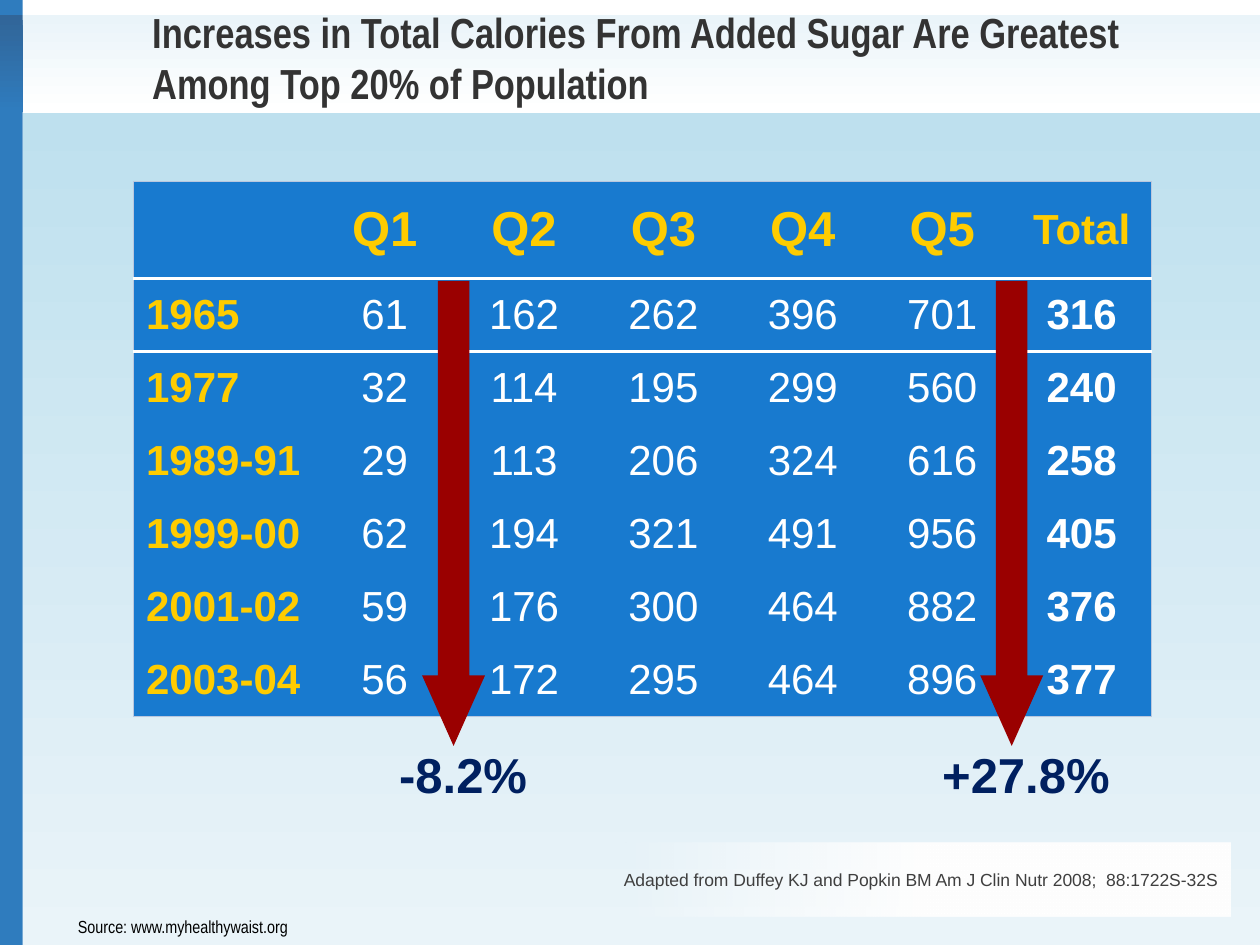
from lxml import etree
from pptx import Presentation
from pptx.dml.color import RGBColor
from pptx.enum.shapes import MSO_SHAPE
from pptx.enum.text import MSO_ANCHOR, PP_ALIGN
from pptx.oxml.ns import qn
from pptx.util import Inches, Pt

RECT, DOWN_ARROW = MSO_SHAPE.RECTANGLE, MSO_SHAPE.DOWN_ARROW
TOP, MIDDLE = MSO_ANCHOR.TOP, MSO_ANCHOR.MIDDLE
LEFT, CENTER, RIGHT = PP_ALIGN.LEFT, PP_ALIGN.CENTER, PP_ALIGN.RIGHT

COLORS = {
    "stripe": "2F7CBE", "stripe_dark": "316598", "pale": "EAF4F9",
    "sky": "BEE0EE", "white": "FFFFFF", "black": "000000",
    "title": "333333", "citation": "3F3F3F", "table": "187ACF",
    "edge": "B9C7DE", "gold": "FFCC00", "arrow": "9A0000", "navy": "002060",
}

ROWS = [
    ["", "Q1", "Q2", "Q3", "Q4", "Q5", "Total"],
    ["1965", "61", "162", "262", "396", "701", "316"],
    ["1977", "32", "114", "195", "299", "560", "240"],
    ["1989-91", "29", "113", "206", "324", "616", "258"],
    ["1999-00", "62", "194", "321", "491", "956", "405"],
    ["2001-02", "59", "176", "300", "464", "882", "376"],
    ["2003-04", "56", "172", "295", "464", "896", "377"],
]


def rgb(name):
    return RGBColor.from_string(COLORS[name])


def add_block(s, shape, box, color):
    sp = s.shapes.add_shape(shape, *map(Inches, box))
    sp.shadow.inherit = False
    sp.line.fill.background()
    sp.fill.solid()
    sp.fill.fore_color.rgb = rgb(color)
    return sp


def set_gradient(sp, stops, angle):
    """Swap the solid fill for stops of (percent, color, opacity percent)."""
    sp_pr = sp.element.spPr
    solid = sp_pr.find(qn("a:solidFill"))
    grad = etree.Element(qn("a:gradFill"), rotWithShape="1")
    gs_list = etree.SubElement(grad, qn("a:gsLst"))
    for pos, color, opacity in stops:
        gs = etree.SubElement(gs_list, qn("a:gs"), pos=str(pos * 1000))
        clr = etree.SubElement(gs, qn("a:srgbClr"), val=COLORS[color])
        if opacity < 100:
            etree.SubElement(clr, qn("a:alpha"), val=str(opacity * 1000))
    etree.SubElement(grad, qn("a:lin"), ang=str(angle * 60000), scaled="0")
    sp_pr.replace(solid, grad)


def write(p, text, color, align=LEFT, **font):
    p.alignment = align
    r = p.add_run()
    r.text = text
    for name, value in font.items():
        setattr(r.font, name, value)
    r.font.color.rgb = rgb(color)


def add_text(s, box, text, color, align=LEFT, anchor=TOP, wrap=True, **font):
    tf = s.shapes.add_textbox(*map(Inches, box)).text_frame
    tf.word_wrap = wrap
    tf.vertical_anchor = anchor
    write(tf.paragraphs[0], text, color, align, **font)


def set_border(cell, side, color=None, width=0):
    ln = etree.Element(qn("a:ln" + side), w=str(Pt(width)))
    if color:
        fill = etree.SubElement(ln, qn("a:solidFill"))
        etree.SubElement(fill, qn("a:srgbClr"), val=COLORS[color])
    else:
        etree.SubElement(ln, qn("a:noFill"))
    return ln


def add_background(s, width, height):
    stripe, band_top, band_h, body_top = 0.18, 0.12, 0.77, 0.9
    add_block(s, RECT, (0, 0, stripe, height), "stripe")
    bands = [
        ((0, band_top, width, band_h), "pale", "white"),
        ((0, band_top, stripe, band_h), "stripe_dark", "stripe"),
        ((stripe, body_top, width - stripe, height - body_top), "sky", "pale"),
    ]
    for box, start, end in bands:
        sp = add_block(s, RECT, box, start)
        set_gradient(sp, [(0, start, 100), (100, end, 100)], 90)


def add_footer(s, source_box, citation_box):
    add_text(s, source_box, "Source: www.myhealthywaist.org", "black",
             wrap=False, name="Arial Narrow", size=Pt(10))
    x, y, w, h = citation_box
    sp = add_block(s, RECT, (x + 2.64, y + 0.01, 4.81, 0.58), "white")
    set_gradient(sp, [(0, "white", 0), (50, "white", 100), (100, "white", 100)], 0)
    add_text(s, citation_box,
             "Adapted from Duffey KJ and Popkin BM Am J Clin Nutr 2008;  88:1722S-32S",
             "citation", RIGHT, MIDDLE, name="Arial", size=Pt(10))


def cell_borders(i, j):
    """Thin outer edge, white rules below the header and the first year."""
    last_row, last_col = len(ROWS) - 1, len(ROWS[0]) - 1
    edge, rule = ("edge", 0.75), ("white", 2.25)
    return {
        "L": edge if j == 0 else (),
        "R": edge if j == last_col else (),
        "T": edge if i == 0 else rule if i in (1, 2) else (),
        "B": edge if i == last_row else rule if i in (0, 1) else (),
    }


def add_calorie_table(s, box):
    x, y, w, h = box
    label_w, header_h = 1.44, 0.77
    n_rows, n_cols = len(ROWS), len(ROWS[0])
    frame = s.shapes.add_table(n_rows, n_cols, *map(Inches, box))
    table = frame.table
    for j, col in enumerate(table.columns):
        col.width = Inches((w - label_w) / (n_cols - 1) if j else label_w)
    for i, row in enumerate(table.rows):
        row.height = Inches((h - header_h) / (n_rows - 1) if i else header_h)
    for i, values in enumerate(ROWS):
        for j, value in enumerate(values):
            cell = table.cell(i, j)
            cell.vertical_anchor = MIDDLE
            cell.fill.solid()
            cell.fill.fore_color.rgb = rgb("table")
            tc_pr = cell._tc.get_or_add_tcPr()
            for k, (side, line) in enumerate(cell_borders(i, j).items()):
                tc_pr.insert(k, set_border(cell, side, *line))
            if value:
                heading = i == 0 or j == 0
                quintile = i == 0 and j < n_cols - 1
                write(cell.text_frame.paragraphs[0], value,
                      "gold" if heading else "white", CENTER if j else LEFT,
                      name="Arial", size=Pt(28 if quintile else 24),
                      bold=heading or j == n_cols - 1)


def add_change(s, arrow_box, label_box, text):
    arrow = add_block(s, DOWN_ARROW, arrow_box, "arrow")
    arrow.adjustments[0] = 0.5
    arrow.adjustments[1] = 1.12
    add_text(s, label_box, text, "navy", name="Arial", size=Pt(28), bold=True)


def main():
    prs = Presentation()
    prs.slide_width, prs.slide_height = Inches(10), Inches(7.5)
    s = prs.slides.add_slide(prs.slide_layouts[6])
    add_background(s, 10, 7.5)
    add_footer(s, (0.52, 7.22, 1.89, 0.27), (2.32, 6.68, 7.44, 0.6))
    # Title
    add_text(s, (1.11, 0, 8.41, 0.91),
             "Increases in Total Calories From Added Sugar Are Greatest "
             "Among Top 20% of Population",
             "title", anchor=MIDDLE, name="Arial Narrow", size=Pt(24), bold=True)
    add_calorie_table(s, (1.06, 1.44, 8.08, 4.25))
    # Change over time in the lowest and highest quintiles
    add_change(s, (3.35, 2.23, 0.5, 3.69), (3.07, 5.86, 1.47, 0.57), "-8.2%")
    add_change(s, (7.78, 2.23, 0.5, 3.69), (7.38, 5.86, 1.64, 0.57), "+27.8%")
    prs.save("out.pptx")


if __name__ == "__main__":
    main()
